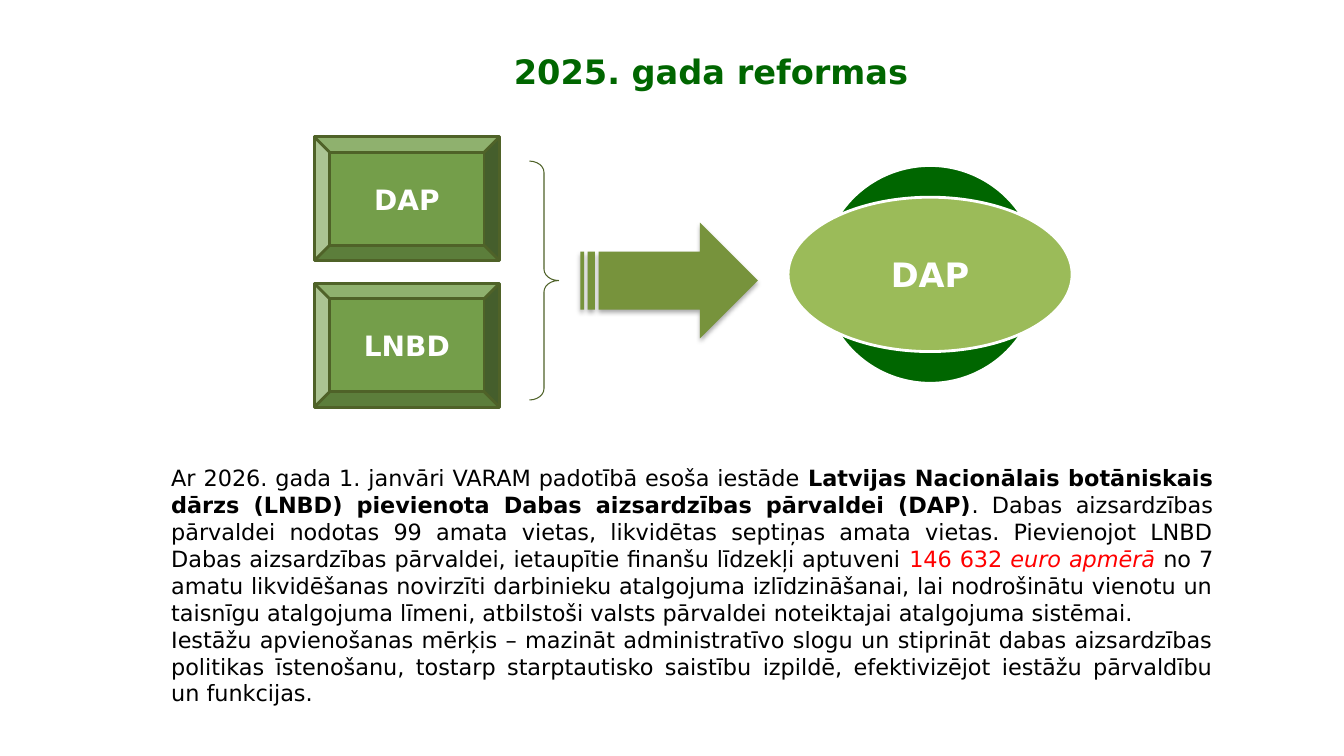
from dataclasses import dataclass

from lxml import etree
from pptx import Presentation
from pptx.dml.color import RGBColor
from pptx.enum.shapes import MSO_SHAPE
from pptx.enum.text import MSO_ANCHOR, MSO_AUTO_SIZE, PP_ALIGN
from pptx.oxml.ns import qn
from pptx.util import Cm, Pt

BEVEL = MSO_SHAPE.BEVEL
BRACE = MSO_SHAPE.RIGHT_BRACE
ARROW = MSO_SHAPE.STRIPED_RIGHT_ARROW
OVAL = MSO_SHAPE.OVAL
TOP, MIDDLE = MSO_ANCHOR.TOP, MSO_ANCHOR.MIDDLE
CENTER, JUSTIFY = PP_ALIGN.CENTER, PP_ALIGN.JUSTIFY
NO_FIT = MSO_AUTO_SIZE.NONE


@dataclass(frozen=True)
class Theme:
    """Colours, font and type sizes of the slide."""
    font: str = "DejaVu Sans"
    deep: str = "006600"
    leaf: str = "749E4A"
    edge: str = "4F6228"
    moss: str = "77933C"
    lime: str = "9BBB59"
    white: str = "FFFFFF"
    black: str = "000000"
    red: str = "FF0000"
    head: int = 24
    label: int = 20
    body: int = 16


THEME = Theme()

REFORM = [
    [
        ("Ar 2026. gada 1. janvāri VARAM padotībā esoša iestāde ", {}),
        ("Latvijas Nacionālais botāniskais dārzs (LNBD) pievienota "
         "Dabas aizsardzības pārvaldei (DAP)", {"bold": True}),
        (". Dabas aizsardzības pārvaldei nodotas 99 amata vietas, likvidētas "
         "septiņas amata vietas. Pievienojot LNBD Dabas aizsardzības pārvaldei, "
         "ietaupītie finanšu līdzekļi aptuveni ", {}),
        ("146 632 ", {"tint": THEME.red}),
        ("euro apmērā ", {"tint": THEME.red, "italic": True}),
        ("no 7 amatu likvidēšanas novirzīti darbinieku atalgojuma "
         "izlīdzināšanai, lai nodrošinātu vienotu un taisnīgu atalgojuma "
         "līmeni, atbilstoši valsts pārvaldei noteiktajai atalgojuma "
         "sistēmai.", {}),
    ],
    [
        ("Iestāžu apvienošanas mērķis – mazināt administratīvo slogu un "
         "stiprināt dabas aizsardzības politikas īstenošanu, tostarp "
         "starptautisko saistību izpildē, efektivizējot iestāžu pārvaldību "
         "un funkcijas.", {}),
    ],
]


def style(font, size, tint, bold=False):
    """Set the theme font with a size, colour and weight."""
    font.name = THEME.font
    font.size = Pt(size)
    font.bold = bold
    font.color.rgb = RGBColor.from_string(tint)


def place(shape, box):
    """Move a shape to a box given in centimetres."""
    shape.left, shape.top, shape.width, shape.height = map(Cm, box)


def draw(slide, kind, box, fill=None, line=None, width=2):
    """Add a flat preset shape."""
    shape = slide.shapes.add_shape(kind, *map(Cm, box))
    shape.shadow.inherit = False
    if fill:
        shape.fill.solid()
        shape.fill.fore_color.rgb = RGBColor.from_string(fill)
    else:
        shape.fill.background()
    if line:
        shape.line.color.rgb = RGBColor.from_string(line)
        shape.line.width = Pt(width)
    else:
        shape.line.fill.background()
    return shape


def label(shape, text, size):
    """Write a bold white label in the middle of a shape."""
    frame = shape.text_frame
    frame.vertical_anchor = MIDDLE
    para = frame.paragraphs[0]
    para.text = text
    para.alignment = CENTER
    style(para.font, size, THEME.white, True)


def shade(shape):
    """Give a shape a soft shadow below it."""
    effect = shape.element.spPr.find(qn("a:effectLst"))
    outer = etree.SubElement(effect, qn("a:outerShdw"), blurRad=str(Pt(3.5)),
                             dist=str(Pt(2.2)), dir="5400000", rotWithShape="0")
    color = etree.SubElement(outer, qn("a:srgbClr"), val=THEME.black)
    etree.SubElement(color, qn("a:alpha"), val="32000")


def add_title(slide, box):
    """Fill the title placeholder."""
    title = slide.shapes.title
    place(title, box)
    frame = title.text_frame
    frame.auto_size = NO_FIT
    frame.vertical_anchor = TOP
    frame.margin_top = Cm(0.22)
    para = frame.paragraphs[0]
    para.text = "2025. gada reformas"
    para.alignment = CENTER
    style(para.font, THEME.head, THEME.deep, True)


def add_parts(slide, box):
    """Stack the merging bodies and close them with a brace."""
    left, top, width, height = box
    tall = 3.12
    step = height - tall
    for row, name in enumerate(("DAP", "LNBD")):
        spot = (left, top + row * step, 4.67, tall)
        label(draw(slide, BEVEL, spot, THEME.leaf, THEME.edge), name, THEME.label)
    span = 0.74
    spot = (left + width - span, top + 0.61, span, 6.02)
    brace = draw(slide, BRACE, spot, None, THEME.edge, 0.75)
    brace.adjustments[0] = 0.385


def add_arrow(slide, box):
    """Draw the striped arrow towards the result."""
    shade(draw(slide, ARROW, box, THEME.moss))


def add_result(slide, box):
    """Draw the merged body as an oval over a centred circle."""
    left, top, width, height = box
    flat = 3.89
    disc = (left + (width - height) / 2, top, height, height)
    draw(slide, OVAL, disc, THEME.deep, THEME.white)
    spot = (left, top + (height - flat) / 2, width, flat)
    label(draw(slide, OVAL, spot, THEME.lime, THEME.white), "DAP", THEME.head)


def add_body(slide, box):
    """Fill the body placeholder with justified text."""
    body = slide.placeholders[1]
    place(body, box)
    frame = body.text_frame
    frame.auto_size = NO_FIT
    for index, parts in enumerate(REFORM):
        para = frame.add_paragraph() if index else frame.paragraphs[0]
        props = para._p.get_or_add_pPr()
        props.set("marL", "0")
        props.set("indent", "0")
        etree.SubElement(props, qn("a:buNone"))
        para.alignment = JUSTIFY
        para.space_before = Pt(0)
        style(para.font, THEME.body, THEME.black)
        for text, look in parts:
            run = para.add_run()
            run.text = text
            style(run.font, THEME.body, look.get("tint", THEME.black),
                  look.get("bold", False))
            run.font.italic = look.get("italic", False)


def main():
    """Build and save the slide."""
    deck = Presentation()
    deck.slide_width, deck.slide_height = Cm(33.87), Cm(19.05)
    slide = deck.slides.add_slide(deck.slide_layouts[1])
    add_title(slide, (6.63, 1.07, 22.58, 2.41))
    add_parts(slide, (7.92, 3.45, 6.16, 6.81))
    add_arrow(slide, (14.63, 5.61, 4.47, 2.92))
    add_result(slide, (19.86, 4.17, 7.16, 5.49))
    add_body(slide, (4.06, 11.58, 26.77, 6.4))
    deck.save("out.pptx")


if __name__ == "__main__":
    main()
